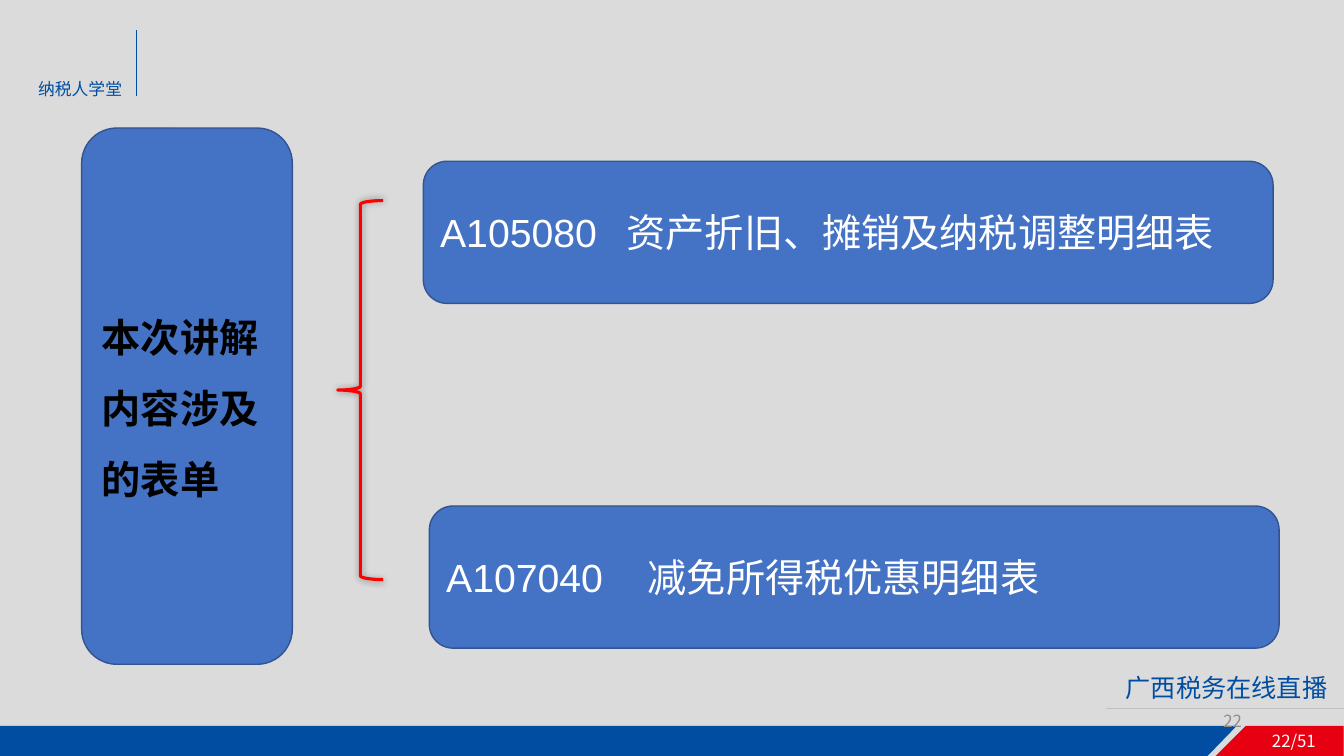
from dataclasses import dataclass

from lxml.etree import SubElement
from pptx import Presentation
from pptx.dml.color import RGBColor as Color
from pptx.enum.shapes import MSO_CONNECTOR as Connector, MSO_SHAPE as Shape
from pptx.enum.text import MSO_ANCHOR as Anchor, PP_ALIGN as Align
from pptx.oxml.ns import qn
from pptx.util import Inches, Pt


@dataclass(frozen=True)
class Theme:
    backdrop: str = "DBDBDB"
    navy: str = "004DA1"
    crimson: str = "E60012"
    panel: str = "4472C4"
    edge: str = "325491"
    brace: str = "FF0000"
    rule: str = "BFBFBF"
    muted: str = "8C8C8C"
    white: str = "FFFFFF"
    black: str = "000000"
    chinese: str = "Noto Sans CJK SC"
    latin: str = "Arial"
    small: int = 12
    medium: int = 18
    large: int = 28


theme = Theme()


def grid(*cells):
    return [Inches(cell / 10) for cell in cells]


def write(box, text, size=theme.small, color=theme.navy, font=theme.chinese, bold=False,
          align=Align.LEFT, anchor=Anchor.TOP, spacing=1.0, wrap=True, tab=None):
    frame = box.text_frame
    frame.word_wrap = wrap
    frame.vertical_anchor = anchor
    para = frame.paragraphs[0]
    para.alignment = align
    para.line_spacing = spacing
    if tab:
        stops = SubElement(para._p.get_or_add_pPr(), qn("a:tabLst"))
        SubElement(stops, qn("a:tab"), pos=str(grid(tab)[0]), algn="l")
    span = para.add_run()
    span.text = text
    span.font.size = Pt(size)
    span.font.bold = bold
    span.font.color.rgb = Color.from_string(color)
    span.font.name = font
    SubElement(span._r.get_or_add_rPr(), qn("a:ea"), typeface=theme.chinese)


deck = Presentation()
deck.slide_width, deck.slide_height = grid(133.33, 75)
page = deck.slides.add_slide(deck.slide_layouts[6])
page.background.fill.solid()
page.background.fill.fore_color.rgb = Color.from_string(theme.backdrop)
shapes = page.shapes

band_top, band_bottom = 72, 75.2
bands = [
    (theme.navy, 0, 122.7, 119.6, 0),
    (theme.crimson, 123.6, 133.3, 133.3, 120.4),
]
for color, top_left, top_right, bottom_right, bottom_left in bands:
    outline = shapes.build_freeform(*grid(top_left, band_top))
    outline.add_line_segments([
        grid(top_right, band_top),
        grid(bottom_right, band_bottom),
        grid(bottom_left, band_bottom),
    ], close=True)
    band = outline.convert_to_shape()
    band.shadow.inherit = False
    band.fill.solid()
    band.fill.fore_color.rgb = Color.from_string(color)
    band.line.fill.background()

rules = [
    (theme.navy, (13.5, 3, 13.5, 9.5)),
    (theme.rule, (109.7, 70.3, 133.3, 70.3)),
]
for color, ends in rules:
    rule = shapes.add_connector(Connector.STRAIGHT, *grid(*ends))
    rule.line.color.rgb = Color.from_string(color)
    rule.line.width = Pt(0.5)
    SubElement(rule._element.spPr, qn("a:effectLst"))

labels = [
    ("22/51", (125.2, 72, 7.1, 4), dict(color=theme.white)),
    ("纳税人学堂", (2.8, 7.3, 10.8, 3), dict(wrap=False)),
    ("广西税务在线直播", (110.7, 66.2, 22.6, 4), dict(size=theme.medium, wrap=False)),
    ("22", (94.2, 69.5, 30, 4),
     dict(color=theme.muted, align=Align.RIGHT, anchor=Anchor.MIDDLE)),
]
for text, place, style in labels:
    write(shapes.add_textbox(*grid(*place)), text, **style)

panels = [
    (Shape.ROUNDED_RECTANGLE, (8.1, 12.7, 20.9, 53.2), "本次讲解内容涉及的表单",
     dict(color=theme.black, bold=True, spacing=1.5)),
    (Shape.FLOWCHART_ALTERNATE_PROCESS, (42, 16, 84.3, 14.1),
     "A105080\t资产折旧、摊销及纳税调整明细表",
     dict(color=theme.white, font=theme.latin, tab=18.5)),
    (Shape.FLOWCHART_ALTERNATE_PROCESS, (42.6, 50.2, 84.3, 14.1),
     "A107040\t减免所得税优惠明细表",
     dict(color=theme.white, font=theme.latin, tab=20)),
]
for kind, place, text, style in panels:
    panel = shapes.add_shape(kind, *grid(*place))
    panel.shadow.inherit = False
    panel.fill.solid()
    panel.fill.fore_color.rgb = Color.from_string(theme.panel)
    panel.line.color.rgb = Color.from_string(theme.edge)
    panel.line.width = Pt(1)
    write(panel, text, size=theme.large, anchor=Anchor.MIDDLE, **style)

brace = shapes.add_shape(Shape.LEFT_BRACE, *grid(33.5, 19.9, 4.5, 37.6))
brace.fill.background()
brace.line.color.rgb = Color.from_string(theme.brace)
brace.line.width = Pt(2.25)
brace.shadow.inherit = False
effects = brace._element.spPr.find(qn("a:effectLst"))
shadow = SubElement(effects, qn("a:outerShdw"), blurRad=str(Pt(5)), dist="0", dir="0")
tint = SubElement(shadow, qn("a:srgbClr"), val=theme.black)
SubElement(tint, qn("a:alpha"), val="40000")

deck.save("out.pptx")
